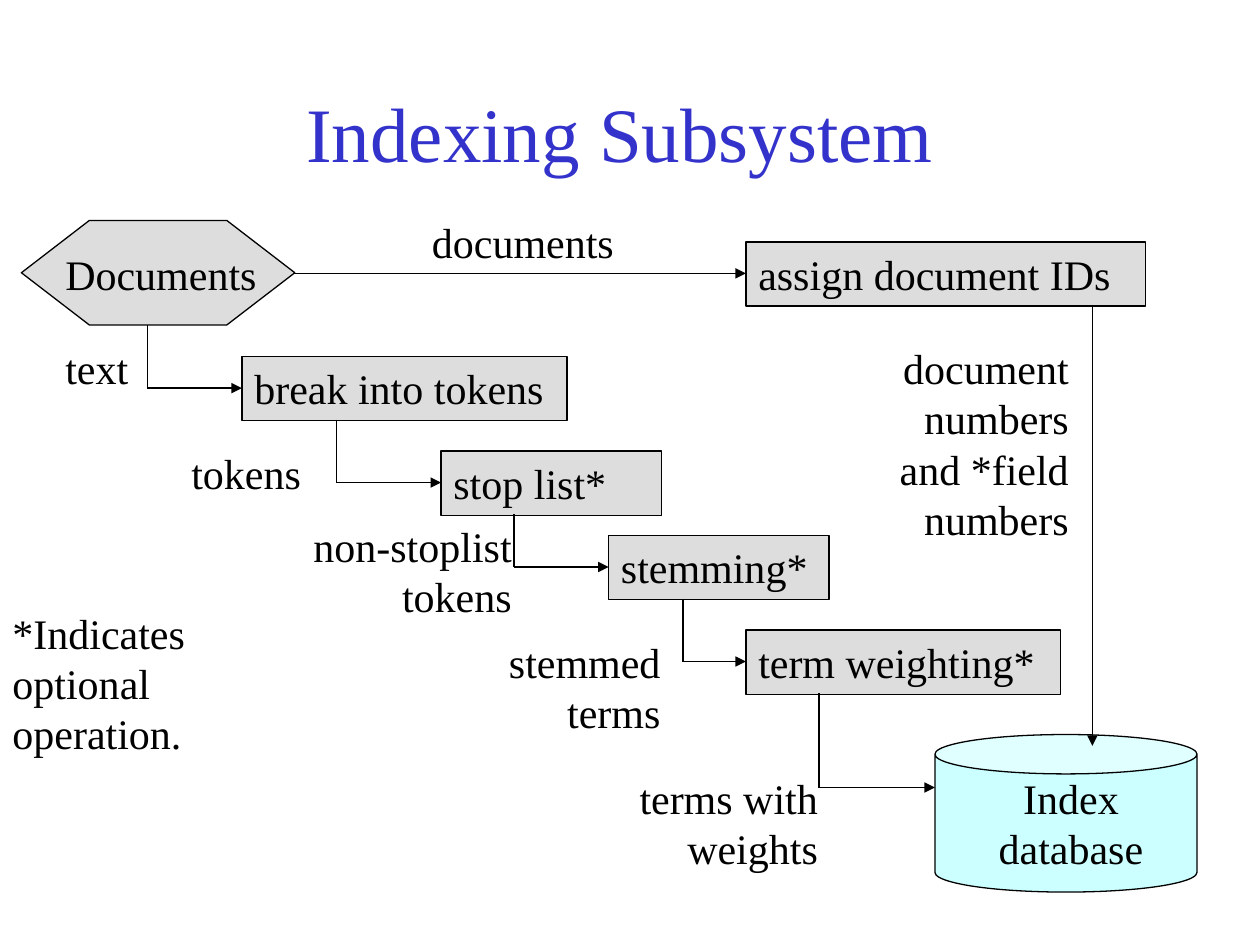
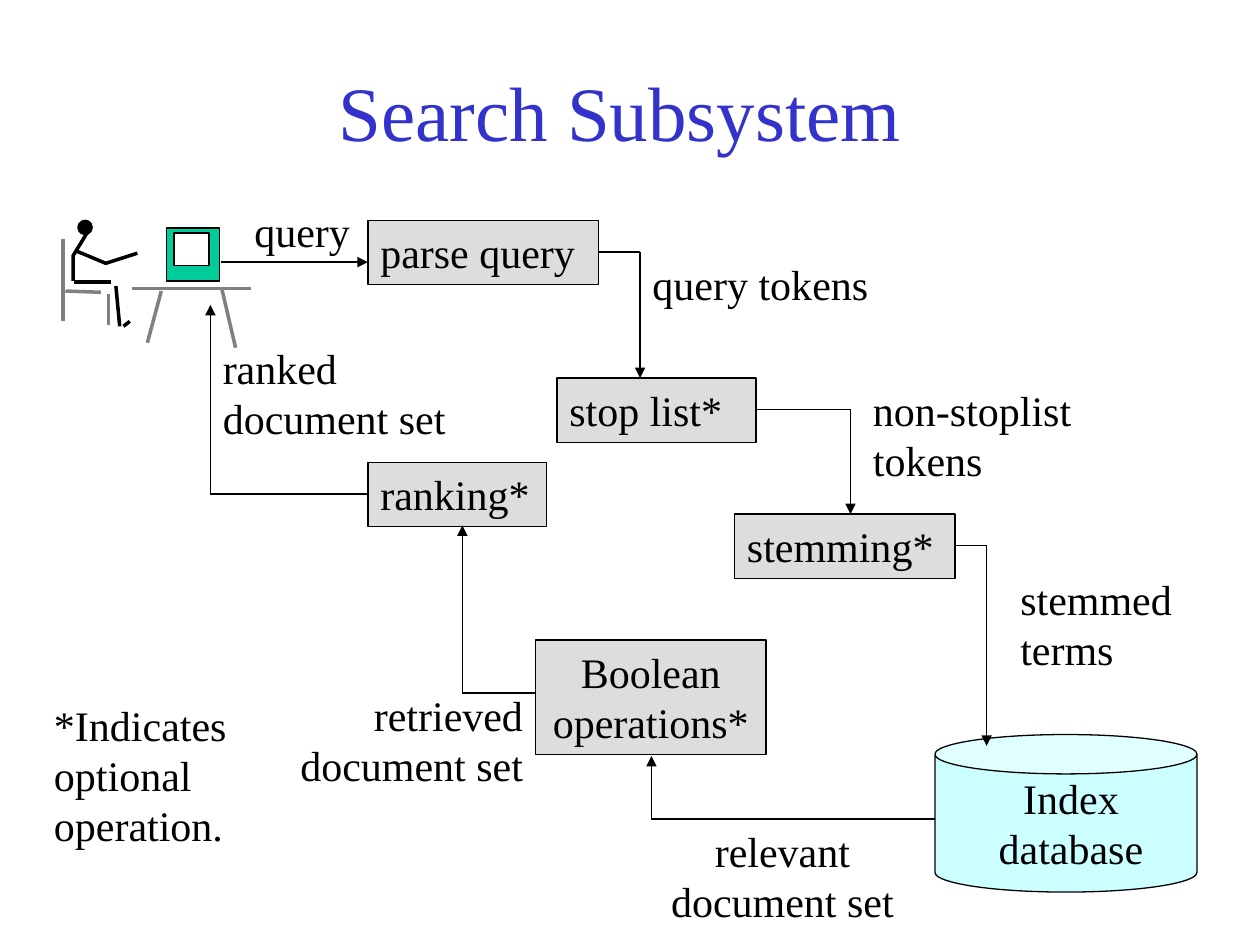
from dataclasses import dataclass
from itertools import pairwise

from lxml import etree
from pptx import Presentation
from pptx import util as u
from pptx.dml.color import RGBColor
from pptx.enum import shapes as kinds, text
from pptx.oxml.ns import qn
from pptx.shapes import autoshape, shapetree
from pptx.slide import Slide

FONT = "Times New Roman"
BLACK, WHITE, GREY = "000000", "FFFFFF", "808080"
TITLE_BLUE, STEP_GREY = "3333CC", "DDDDDD"
STORE_CYAN, MONITOR_GREEN = "CCFFFF", "00CC99"
THIN, THICK = 0.75, 2
STEP_HEIGHT = 0.51
SHAPE = kinds.MSO_SHAPE
LEFT, CENTER, RIGHT = text.PP_ALIGN.LEFT, text.PP_ALIGN.CENTER, text.PP_ALIGN.RIGHT

Point = tuple[float, float]


@dataclass(frozen=True)
class Step:
    """A grey box of the process."""
    words: str
    left: float
    top: float
    width: float
    height: float = STEP_HEIGHT
    align: text.PP_ALIGN = LEFT


@dataclass(frozen=True)
class Label:
    """Free text beside a flow or on a symbol."""
    words: str
    left: float
    top: float
    width: float
    lines: int = 1
    align: text.PP_ALIGN = LEFT


@dataclass(frozen=True)
class Flow:
    """Straight segments through points, with an arrowhead at the end."""
    points: tuple[Point, ...]


@dataclass(frozen=True)
class Stroke:
    """A thick line of the user's workplace drawing."""
    points: tuple[Point, ...]
    color: str


def rgb(value: str) -> RGBColor:
    return RGBColor.from_string(value)


def write(shape: autoshape.Shape, words: str, size: float, color: str,
          align: text.PP_ALIGN) -> None:
    frame = shape.text_frame
    frame.word_wrap = True
    paragraph = frame.paragraphs[0]
    paragraph.alignment = align
    run = paragraph.add_run()
    run.text = words
    run.font.name, run.font.size = FONT, u.Pt(size)
    run.font.color.rgb = rgb(color)


def add_figure(tree: shapetree.SlideShapes, kind: SHAPE, left: float, top: float,
               width: float, height: float, fill: str, weight: float = THIN) -> autoshape.Shape:
    figure = tree.add_shape(kind, u.Inches(left), u.Inches(top),
                            u.Inches(width), u.Inches(height))
    figure.shadow.inherit = False
    figure.fill.solid()
    figure.fill.fore_color.rgb = rgb(fill)
    figure.line.color.rgb = rgb(BLACK)
    figure.line.width = u.Pt(weight)
    return figure


def add_line(tree: shapetree.SlideShapes, start: Point, end: Point, color: str = BLACK,
             weight: float = THIN, arrow: bool = False) -> None:
    line = tree.add_connector(kinds.MSO_CONNECTOR.STRAIGHT,
                              *(u.Inches(value) for value in (*start, *end)))
    line.line.color.rgb = rgb(color)
    line.line.width = u.Pt(weight)
    properties = line.element.spPr
    if arrow:
        etree.SubElement(properties.find(qn("a:ln")), qn("a:tailEnd"), type="triangle")
    etree.SubElement(properties, qn("a:effectLst"))


def add_stroke(tree: shapetree.SlideShapes, stroke: Stroke) -> None:
    if len(stroke.points) == 2:
        add_line(tree, *stroke.points, stroke.color, THICK)
        return
    first, *rest = [(u.Inches(x), u.Inches(y)) for x, y in stroke.points]
    builder = tree.build_freeform(*first)
    builder.add_line_segments(rest, close=False)
    limb = builder.convert_to_shape()
    limb.shadow.inherit = False
    limb.fill.background()
    limb.line.color.rgb = rgb(stroke.color)
    limb.line.width = u.Pt(THICK)


def add_step(slide: Slide, step: Step) -> None:
    box = add_figure(slide.shapes, SHAPE.RECTANGLE, step.left, step.top,
                     step.width, step.height, STEP_GREY)
    write(box, step.words, 24, BLACK, step.align)
    box.text_frame.vertical_anchor = text.MSO_ANCHOR.TOP
    box.text_frame.auto_size = text.MSO_AUTO_SIZE.SHAPE_TO_FIT_TEXT


def add_label(slide: Slide, label: Label) -> None:
    height = 0.1 + 0.4 * label.lines
    box = slide.shapes.add_textbox(u.Inches(label.left), u.Inches(label.top),
                                   u.Inches(label.width), u.Inches(height))
    write(box, label.words, 24, BLACK, label.align)
    box.text_frame.auto_size = text.MSO_AUTO_SIZE.SHAPE_TO_FIT_TEXT


def add_title(slide: Slide, words: str, top: float) -> None:
    title = slide.shapes.add_textbox(u.Inches(0.67), u.Inches(top),
                                     u.Inches(8.5), u.Inches(1.25))
    write(title, words, 44, TITLE_BLUE, CENTER)
    title.text_frame.vertical_anchor = text.MSO_ANCHOR.MIDDLE


def add_process(slide: Slide, steps: list[Step], flows: list[Flow],
                labels: list[Label], note_at: Point) -> None:
    """Draw the parts both subsystems have: steps, index, flows, labels, footnote."""
    for step in steps:
        add_step(slide, step)
    add_figure(slide.shapes, SHAPE.CAN, 7.42, 5.83, 2.08, 1.25, STORE_CYAN)
    for flow in flows:
        segments = list(pairwise(flow.points))
        for number, (start, end) in enumerate(segments, 1):
            add_line(slide.shapes, start, end, arrow=number == len(segments))
    index_name = Label("Index database", 7.5, 6.08, 2, 2, CENTER)
    footnote = Label("*Indicates optional operation.", *note_at, 2.08, 3)
    for label in (*labels, index_name, footnote):
        add_label(slide, label)


def add_workplace(slide: Slide) -> None:
    """Draw the user sitting at a desk with a computer."""
    workplace = slide.shapes.add_group_shape().shapes
    for stroke in WORKPLACE:
        add_stroke(workplace, stroke)
    add_figure(workplace, SHAPE.OVAL, 0.62, 1.75, 0.11, 0.11, BLACK, 1)
    add_figure(workplace, SHAPE.RECTANGLE, 1.32, 1.81, 0.42, 0.42, MONITOR_GREEN)
    add_figure(workplace, SHAPE.RECTANGLE, 1.38, 1.85, 0.28, 0.26, WHITE)


# Indexing subsystem
INDEXING_STEPS = [
    Step("break into tokens", 1.92, 2.83, 2.58),
    Step("stop list*", 3.5, 3.58, 1.75),
    Step("stemming*", 4.83, 4.25, 1.75),
    Step("term weighting*", 5.92, 5, 2.5),
    Step("assign document IDs", 5.92, 1.92, 3.17),
]
INDEXING_FLOWS = [
    Flow(((1.17, 2.58), (1.17, 3.08), (1.92, 3.08))),
    Flow(((2.67, 3.33), (2.67, 3.83), (3.5, 3.83))),
    Flow(((4.08, 4.08), (4.08, 4.5), (4.83, 4.5))),
    Flow(((5.42, 4.75), (5.42, 5.25), (5.92, 5.25))),
    Flow(((6.5, 5.5), (6.5, 6.25), (7.42, 6.25))),
    Flow(((2.33, 2.17), (5.92, 2.17))),
    Flow(((8.67, 2.42), (8.67, 5.92))),
]
INDEXING_LABELS = [
    Label("Documents", 0.42, 1.92, 2),
    Label("text", 0.42, 2.67, 1),
    Label("tokens", 1.42, 3.5, 1.17),
    Label("non-stoplist tokens", 2.33, 4.08, 1.83, 2, RIGHT),
    Label("stemmed terms", 3.42, 5, 1.92, 2, RIGHT),
    Label("terms with weights", 4.92, 6.08, 1.67, 2, RIGHT),
    Label("documents", 3.33, 1.67, 2),
    Label("document numbers and *field numbers", 7, 2.67, 1.58, 4, RIGHT),
]

# Search subsystem
SEARCH_STEPS = [
    Step("parse query", 2.92, 1.75, 1.83),
    Step("stop list*", 4.42, 3, 1.58),
    Step("stemming*", 5.83, 4.08, 1.75),
    Step("Boolean operations*", 4.25, 5.08, 1.83, 0.91, CENTER),
    Step("ranking*", 2.92, 3.67, 1.42),
]
SEARCH_FLOWS = [
    Flow(((1.75, 2.08), (2.92, 2.08))),
    Flow(((4.75, 2), (5.08, 2), (5.08, 3))),
    Flow(((6, 3.25), (6.75, 3.25), (6.75, 4.08))),
    Flow(((7.58, 4.33), (7.83, 4.33), (7.83, 5.92))),
    Flow(((7.42, 6.5), (5.17, 6.5), (5.17, 6))),
    Flow(((4.25, 5.5), (3.67, 5.5), (3.67, 4.17))),
    Flow(((2.92, 3.92), (1.67, 3.92), (1.67, 2.42))),
]
SEARCH_LABELS = [
    Label("query", 1.92, 1.58, 1),
    Label("query tokens", 5.08, 2, 2.58),
    Label("non-stoplist tokens", 6.83, 3, 1.83, 2),
    Label("stemmed terms", 8, 4.5, 1.5, 2),
    Label("relevant document set", 5.17, 6.5, 2.08, 2, CENTER),
    Label("retrieved document set", 1.58, 5.42, 2.67, 2, RIGHT),
    Label("ranked document set", 1.67, 2.67, 2, 2),
]
WORKPLACE = [
    # Desk
    Stroke(((1.05, 2.29), (1.99, 2.29)), GREY),
    Stroke(((1.28, 2.31), (1.17, 2.72)), GREY),
    Stroke(((1.87, 2.76), (1.76, 2.29)), GREY),
    # Chair
    Stroke(((0.5, 1.9), (0.5, 2.55)), GREY),
    Stroke(((0.52, 2.31), (0.8, 2.32)), GREY),
    Stroke(((0.86, 2.33), (0.86, 2.58)), GREY),
    # Back, thigh, shin, foot and arm of the user
    Stroke(((0.69, 1.85), (0.58, 2.03), (0.58, 2.23)), BLACK),
    Stroke(((0.59, 2.24), (0.88, 2.24)), BLACK),
    Stroke(((0.92, 2.27), (0.95, 2.59)), BLACK),
    Stroke(((0.98, 2.59), (1.03, 2.55)), BLACK),
    Stroke(((0.6, 1.99), (0.84, 2.09), (1.09, 2.01)), BLACK),
]


def main() -> None:
    deck = Presentation()
    deck.slide_width, deck.slide_height = u.Inches(10), u.Inches(7.5)
    blank = deck.slide_layouts[6]

    indexing = deck.slides.add_slide(blank)
    add_title(indexing, "Indexing Subsystem", 0.42)
    documents = add_figure(indexing.shapes, SHAPE.HEXAGON, 0.17, 1.75, 2.17, 0.83, STEP_GREY)
    documents.adjustments[0] = 0.65
    add_process(indexing, INDEXING_STEPS, INDEXING_FLOWS, INDEXING_LABELS, (0, 4.77))

    search = deck.slides.add_slide(blank)
    add_title(search, "Search Subsystem", 0.25)
    add_workplace(search)
    add_process(search, SEARCH_STEPS, SEARCH_FLOWS, SEARCH_LABELS, (0.33, 5.5))

    deck.save("out.pptx")


if __name__ == "__main__":
    main()
